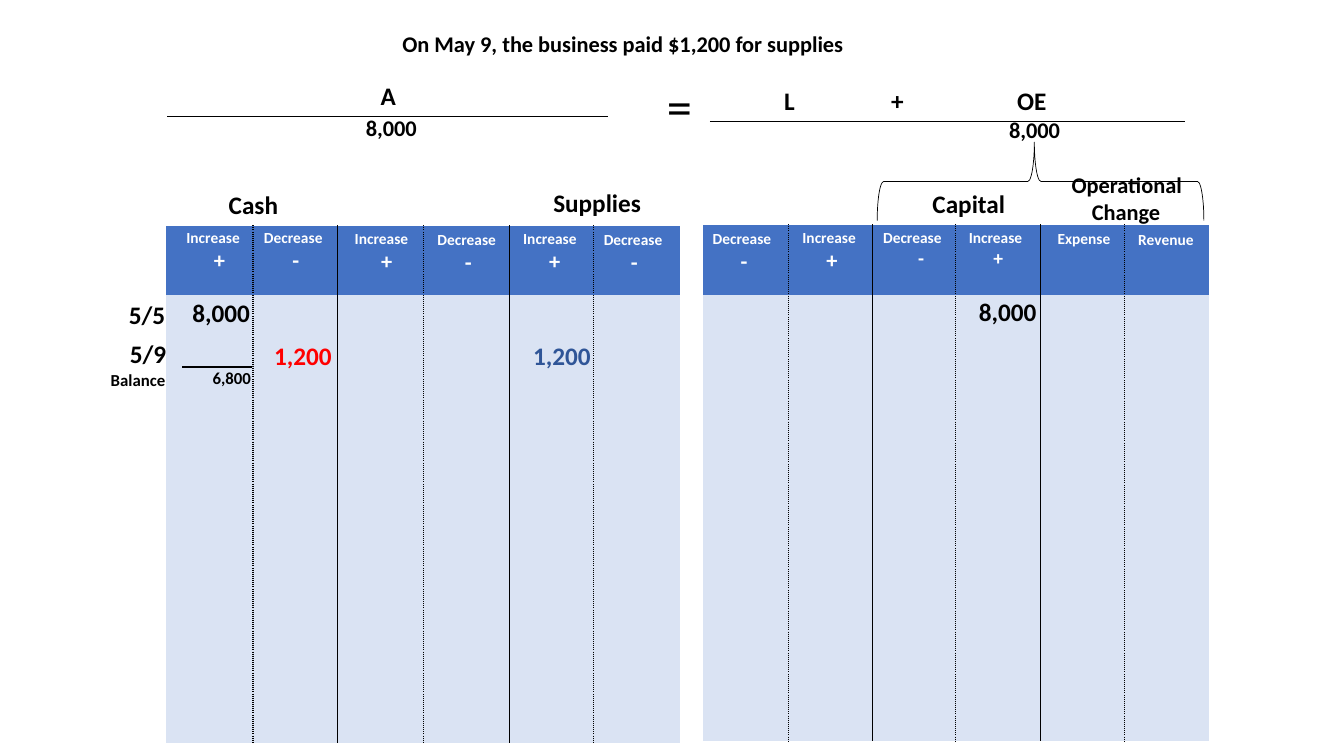
from dataclasses import dataclass
from lxml import etree
from pptx import Presentation
from pptx.dml.color import RGBColor
from pptx.enum.shapes import MSO_CONNECTOR, MSO_SHAPE
from pptx.enum.text import MSO_ANCHOR, MSO_AUTO_SIZE, PP_ALIGN
from pptx.oxml.ns import qn
from pptx.util import Inches, Pt

LINE = MSO_CONNECTOR.STRAIGHT
BRACE = MSO_SHAPE.LEFT_BRACE
LEFT, MID = PP_ALIGN.LEFT, PP_ALIGN.CENTER
TOP, FIXED = MSO_ANCHOR.TOP, MSO_AUTO_SIZE.NONE


@dataclass(frozen=True)
class Theme:
    font: str = "Calibri"
    ink: str = "000000"
    white: str = "FFFFFF"
    head: str = "4472C4"
    body: str = "DAE3F3"
    red: str = "FF0000"
    blue: str = "2F5597"
    sign: int = 36
    large: int = 18
    mid: int = 16
    less: int = 14
    small: int = 12
    tag: int = 11
    bare: str = "{2D5ABB26-0587-4C30-8999-92F81FD0307C}"  # no style, no grid


T = Theme()

TITLE = "On May 9, the business paid $1,200 for supplies"

# left, top, column widths, row heights
GRIDS = [
    (1.65, 2.24, [0.86, 0.84, 0.85, 0.85, 0.84, 0.85], [0.69] + [1.11] * 4),
    (6.97, 2.23, [0.85, 0.83, 0.83, 0.84, 0.83, 0.84],
     [0.7] + [1.1, 1.11] * 2),
]
TOTAL = (1.81, 3.64, [0.69], [0.4])

# left, top, width, label, sign, sign size
HEADS = [
    (1.75, 2.21, 0.85, "Increase", "+", T.mid),
    (2.52, 2.21, 0.83, "Decrease", "-", T.mid),
    (3.42, 2.22, 0.83, "Increase", "+", T.mid),
    (4.24, 2.23, 0.81, "Decrease", "-", T.mid),
    (5.09, 2.22, 0.82, "Increase", "+", T.mid),
    (5.89, 2.23, 0.8, "Decrease", "-", T.mid),
    (6.97, 2.22, 0.82, "Decrease", "-", T.mid),
    (7.86, 2.21, 0.78, "Increase", "+", T.mid),
    (8.66, 2.21, 0.95, "Decrease", "-", T.less),
    (9.51, 2.21, 0.78, "Increase", "+", T.less),
    (10.39, 2.22, 0.89, "Expense", "", T.mid),
    (11.19, 2.23, 0.82, "Revenue", "", T.mid),
]

# left, top, width, text, size, colour, alignment
LABELS = [
    (1.66, 0.75, 4.38, "A", T.large, T.ink, MID),
    (6.38, 0.7, 0.72, "=", T.sign, T.ink, MID),
    (3.53, 1.08, 0.94, "8,000", T.mid, T.ink, LEFT),
    (9.91, 1.1, 0.94, "8,000", T.mid, T.ink, LEFT),
    (2.17, 1.83, 0.85, "Cash", T.large, T.ink, LEFT),
    (5.39, 1.81, 1.14, "Supplies", T.large, T.ink, LEFT),
    (9.15, 1.82, 1.39, "Capital", T.large, T.ink, LEFT),
    (1.18, 2.92, 0.83, "5/5", T.large, T.ink, LEFT),
    (1.19, 3.31, 0.83, "5/9", T.large, T.ink, LEFT),
    (1, 3.62, 0.84, "Balance", T.small, T.ink, LEFT),
    (1.81, 2.9, 0.84, "8,000", T.large, T.ink, LEFT),
    (2.62, 3.33, 0.84, "1,200", T.large, T.red, LEFT),
    (5.19, 3.33, 0.84, "1,200", T.large, T.blue, LEFT),
    (9.61, 2.89, 0.84, "8,000", T.large, T.ink, LEFT),
    (2.01, 3.6, 0.84, "6,800", T.small, T.ink, LEFT),
]
CLAIMS = (7.68, 0.8, 4.27, "L\t+\tOE", T.large, T.ink, LEFT)
STOPS = [1.06, 2.31]
CHANGE = (10.53, 1.65, 1.39, "Operational\nChange", T.mid, T.ink, LEFT)
INDENT = 0.2

# left, right, y, weight
RULES = [(1.66, 6.03, 1.15, 0.5), (7.04, 11.75, 1.2, 0.5)]


def rgb(code):
    return RGBColor.from_string(code)


def style(para, size, color, align):
    para.alignment = align
    for run in para.runs:
        font = run.font
        font.name, font.size = T.font, Pt(size)
        font.bold = size != T.sign
        font.color.rgb = rgb(color)


def label(slide, left, top, wide, text, size, color, align):
    lines = text.count("\n") + 1
    high = 0.1 + lines * size / 60
    box = slide.shapes.add_textbox(
        Inches(left), Inches(top), Inches(wide), Inches(high))
    frame = box.text_frame
    frame.word_wrap = True
    frame.text = text
    for para in frame.paragraphs:
        style(para, size, color, align)
    return frame


def claims(slide):
    para = label(slide, *CLAIMS).paragraphs[0]
    tabs = etree.SubElement(para._p.get_or_add_pPr(), qn("a:tabLst"))
    for stop in STOPS:
        etree.SubElement(tabs, qn("a:tab"), pos=str(Inches(stop)), algn="l")


def change(slide):
    para = label(slide, *CHANGE).paragraphs[1]
    para._p.get_or_add_pPr().set("marL", str(Inches(INDENT)))


def head(slide, left, top, wide, name, sign, size):
    frame = label(slide, left, top, wide, name, T.tag, T.white, LEFT)
    if sign:
        para = frame.add_paragraph()
        para.text = sign
        style(para, size, T.white, MID)


def border(cell, sides):
    """Add (tag, colour, dash) edges ahead of the cell's fill."""
    props = cell._tc.get_or_add_tcPr()
    for spot, (tag, color, dash) in enumerate(sides):
        edge = etree.Element(qn("a:" + tag), w=str(Pt(1)))
        fill = etree.SubElement(edge, qn("a:solidFill"))
        etree.SubElement(fill, qn("a:srgbClr"), val=color)
        etree.SubElement(edge, qn("a:prstDash"), val=dash)
        props.insert(spot, edge)


def plain(slide, left, top, cols, rows):
    """Add a table without a style and return it."""
    table = slide.shapes.add_table(
        len(rows), len(cols), Inches(left), Inches(top),
        Inches(sum(cols)), Inches(sum(rows))).table
    table._tbl.tblPr.find(qn("a:tableStyleId")).text = T.bare
    table.first_row = table.horz_banding = False
    for col, wide in zip(table.columns, cols):
        col.width = Inches(wide)
    for row, high in zip(table.rows, rows):
        row.height = Inches(high)
    return table


def grid(slide, left, top, cols, rows):
    table = plain(slide, left, top, cols, rows)
    for r in range(len(rows)):
        for c in range(len(cols)):
            cell = table.cell(r, c)
            cell.fill.solid()
            cell.fill.fore_color.rgb = rgb(T.body if r else T.head)
            sides = []
            if c:
                sides.append(("lnL", T.ink, "sysDot" if c % 2 else "solid"))
            if c < len(cols) - 1:
                sides.append(("lnR", T.ink, "solid" if c % 2 else "sysDot"))
            if r == 0:
                sides.append(("lnT", T.white, "solid"))
            border(cell, sides)


def total(slide):
    cell = plain(slide, *TOTAL).cell(0, 0)
    cell.fill.background()
    border(cell, [("lnT", T.ink, "solid")])


def rule(slide, left, right, y, weight):
    line = slide.shapes.add_connector(
        LINE, Inches(left), Inches(y), Inches(right), Inches(y))
    line.line.color.rgb = rgb(T.ink)
    line.line.width = Pt(weight)
    etree.SubElement(line._element.spPr, qn("a:effectLst"))


def brace(slide):
    shape = slide.shapes.add_shape(
        BRACE, Inches(9.93), Inches(0.18), Inches(0.78), Inches(3.24))
    shape.rotation = 90
    shape.adjustments[0], shape.adjustments[1] = 0.083, 0.519
    shape.shadow.inherit = False
    shape.fill.background()
    shape.line.color.rgb = rgb(T.ink)
    shape.line.width = Pt(0.5)


def title(slide):
    box = slide.shapes.title
    box.left, box.top = Inches(3.89), Inches(0.25)
    box.width, box.height = Inches(9.4), Inches(0.37)
    frame = box.text_frame
    frame.text = TITLE
    frame.word_wrap = True
    frame.auto_size, frame.vertical_anchor = FIXED, TOP
    style(frame.paragraphs[0], T.mid, T.ink, LEFT)


def main():
    deck = Presentation()
    deck.slide_width, deck.slide_height = Inches(13.33), Inches(7.5)
    slide = deck.slides.add_slide(deck.slide_layouts[5])
    title(slide)
    for draw, parts in ((grid, GRIDS), (rule, RULES),
                        (head, HEADS), (label, LABELS)):
        for part in parts:
            draw(slide, *part)
    for draw in (claims, change, brace, total):
        draw(slide)
    deck.save("out.pptx")


if __name__ == "__main__":
    main()
